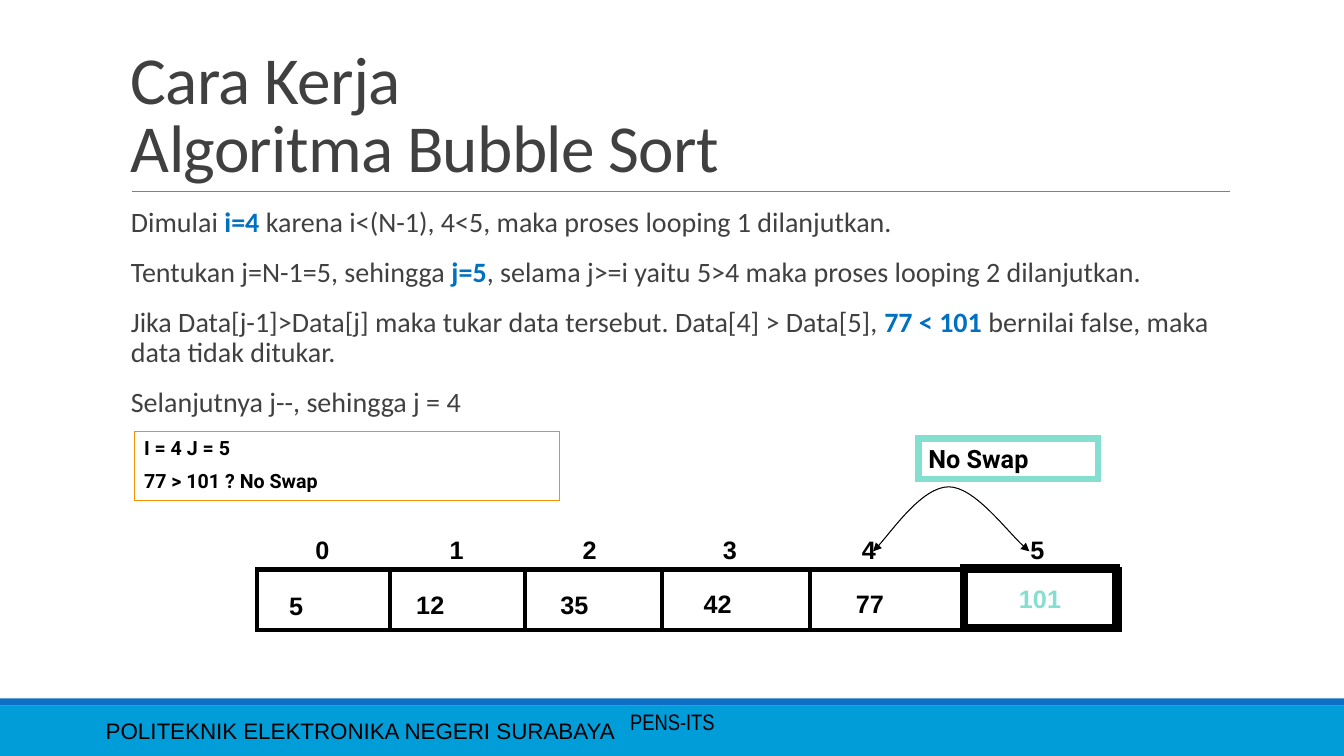
from lxml.etree import SubElement
from pptx import Presentation
from pptx.dml.color import RGBColor
from pptx.enum.shapes import MSO_CONNECTOR, MSO_SHAPE
from pptx.enum.text import MSO_ANCHOR, PP_ALIGN
from pptx.oxml.ns import qn
from pptx.util import Inches, Pt


def paint(fill, color):
    fill.solid()
    fill.fore_color.rgb = RGBColor.from_string(color)


def write_text(shape, text, size=18, font="Arial", color="000000", bold=False,
               align=PP_ALIGN.LEFT, anchor=MSO_ANCHOR.TOP, wrap=True,
               line_spacing=1.0, before=0, after=0, tracking=0, tabs=()):
    frame = shape.text_frame
    frame.word_wrap = wrap
    frame.vertical_anchor = anchor
    for index, line in enumerate(text.split("\n")):
        paragraph = frame.add_paragraph() if index else frame.paragraphs[0]
        if tabs:
            tab_list = SubElement(paragraph._p.get_or_add_pPr(), qn("a:tabLst"))
            for position in tabs:
                SubElement(tab_list, qn("a:tab"), pos=str(Inches(position)), algn="ctr")
        paragraph.alignment = align
        paragraph.line_spacing = line_spacing
        paragraph.space_before = Pt(before if index else 0)
        paragraph.space_after = Pt(after)
        for row_index, row in enumerate(line.split("\v")):
            if row_index:
                paragraph.add_line_break()
            for part_index, part in enumerate(row.split("*")):
                highlighted = part_index % 2 == 1
                run = paragraph.add_run()
                run.text = part
                run.font.size = Pt(size)
                run.font.name = font
                run.font.bold = bold or highlighted
                paint(run.font.fill, "0070C0" if highlighted else color)
                if tracking:
                    run._r.get_or_add_rPr().set("spc", str(tracking))


presentation = Presentation()
presentation.slide_width = Inches(13.33)
presentation.slide_height = Inches(7.5)
slide = presentation.slides.add_slide(presentation.slide_layouts[6])
shapes = slide.shapes

rectangles = []
for left, top, width, height, fill, outline, weight in [
    (0, 7, 13.33, 0.5, "009DD9", None, 0),
    (0, 6.93, 13.33, 0.07, "0F6FC6", None, 0),
    (2.55, 5.65, 8.56, 0.6, None, "000000", 3),
    (9.56, 5.64, 1.51, 0.59, None, "000000", 6),
    (1.33, 4.28, 4.22, 0.69, None, "F49100", 0.75),
    (9.11, 4.35, 1.78, 0.4, None, "85DFD0", 4.5),
]:
    shape = shapes.add_shape(MSO_SHAPE.RECTANGLE, Inches(left), Inches(top),
                             Inches(width), Inches(height))
    shape.shadow.inherit = False
    if fill:
        paint(shape.fill, fill)
    else:
        shape.fill.background()
    if outline:
        paint(shape.line.fill, outline)
        shape.line.width = Pt(weight)
        SubElement(shape.line._get_or_add_ln(), qn("a:miter"), lim="800000")
    else:
        shape.line.fill.background()
    rectangles.append(shape)
current_cell, comparison, result = rectangles[-3:]

rules = [(1.31, 1.9, 12.2, 1.9, "808080", 0.5)]
rules += [(x, 5.65, x, 6.25, "000000", 3) for x in (3.87, 5.21, 6.57, 8.03)]
for x1, y1, x2, y2, color, weight in rules:
    connector = shapes.add_connector(MSO_CONNECTOR.STRAIGHT, Inches(x1), Inches(y1),
                                     Inches(x2), Inches(y2))
    paint(connector.line.fill, color)
    connector.line.width = Pt(weight)
    SubElement(connector._element.spPr, qn("a:effectLst"))

body = "\n".join([
    "Dimulai *i=4 *karena i<(N-1), 4<5, maka proses looping 1 dilanjutkan.",
    "Tentukan j=N-1=5, sehingga *j=5*, selama j>=i yaitu 5>4 maka proses looping 2 dilanjutkan.",
    "Jika Data[j-1]>Data[j] maka tukar data tersebut. Data[4] > Data[5], "
    "*77 < 101 *bernilai false, maka data tidak ditukar.",
    "Selanjutnya j--, sehingga j = 4",
])
middle = MSO_ANCHOR.MIDDLE
value_format = dict(bold=True, wrap=False)
text_boxes = [
    ("POLITEKNIK ELEKTRONIKA NEGERI SURABAYA", 0.95, 7.05, 8.41, 0.4,
     dict(size=16, anchor=middle)),
    ("Cara Kerja\vAlgoritma Bubble Sort", 1.2, 0.31, 11, 1.59,
     dict(size=48, font="Calibri", color="404040", anchor=MSO_ANCHOR.BOTTOM,
          line_spacing=0.85, tracking=-50)),
    (body, 1.2, 2.02, 11, 4.4,
     dict(size=20, font="Calibri", color="404040", line_spacing=0.9, before=12, after=2)),
    ("PENS-ITS", 4.56, 6.9, 4.22, 0.52,
     dict(size=16, font="Arial Narrow", align=PP_ALIGN.CENTER, anchor=middle)),
    ("0\t1\t2\t3\t4\t5", 3.03, 5.25, 7.58, 0.41,
     dict(bold=True, tabs=(1.4, 2.72, 4.11, 5.49, 7.16))),
    ("5", 2.77, 5.81, 0.34, 0.41, value_format),
    ("12", 4.03, 5.8, 0.48, 0.41, value_format),
    ("35", 5.46, 5.8, 0.48, 0.41, value_format),
    ("42", 6.88, 5.79, 0.48, 0.41, value_format),
    ("77", 8.39, 5.79, 0.48, 0.41, value_format),
]
for text, left, top, width, height, text_format in text_boxes:
    box = shapes.add_textbox(Inches(left), Inches(top), Inches(width), Inches(height))
    write_text(box, text, **text_format)

write_text(current_cell, "101", color="85DFD0", bold=True, wrap=False,
           align=PP_ALIGN.CENTER, anchor=middle)
write_text(comparison, "I = 4 J = 5\n77 > 101 ? No Swap",
           size=14, font="Roboto", bold=True, before=6.5)
write_text(result, "No Swap", font="Roboto", bold=True)

start, *controls = [
    (Inches(x), Inches(y)) for x, y in [
        (8.66, 5.47), (8.78, 5.36), (9.15, 4.83), (9.41, 4.83),
        (9.66, 4.83), (10.04, 5.34), (10.21, 5.47),
    ]
]
builder = shapes.build_freeform(*start)
builder.add_line_segments(controls, close=False)
swap_arrow = builder.convert_to_shape()
swap_arrow.shadow.inherit = False
swap_arrow.fill.background()
paint(swap_arrow.line.fill, "000000")
swap_arrow.line.width = Pt(0.75)
curve = swap_arrow._element.spPr.find(".//" + qn("a:path"))
segments = curve.findall(qn("a:lnTo"))
for first in range(0, len(segments), 3):
    bezier = SubElement(curve, qn("a:cubicBezTo"))
    for segment in segments[first:first + 3]:
        bezier.append(segment[0])
        curve.remove(segment)
for end in ("a:headEnd", "a:tailEnd"):
    SubElement(swap_arrow.line._get_or_add_ln(), qn(end), type="triangle")

presentation.save("out.pptx")
